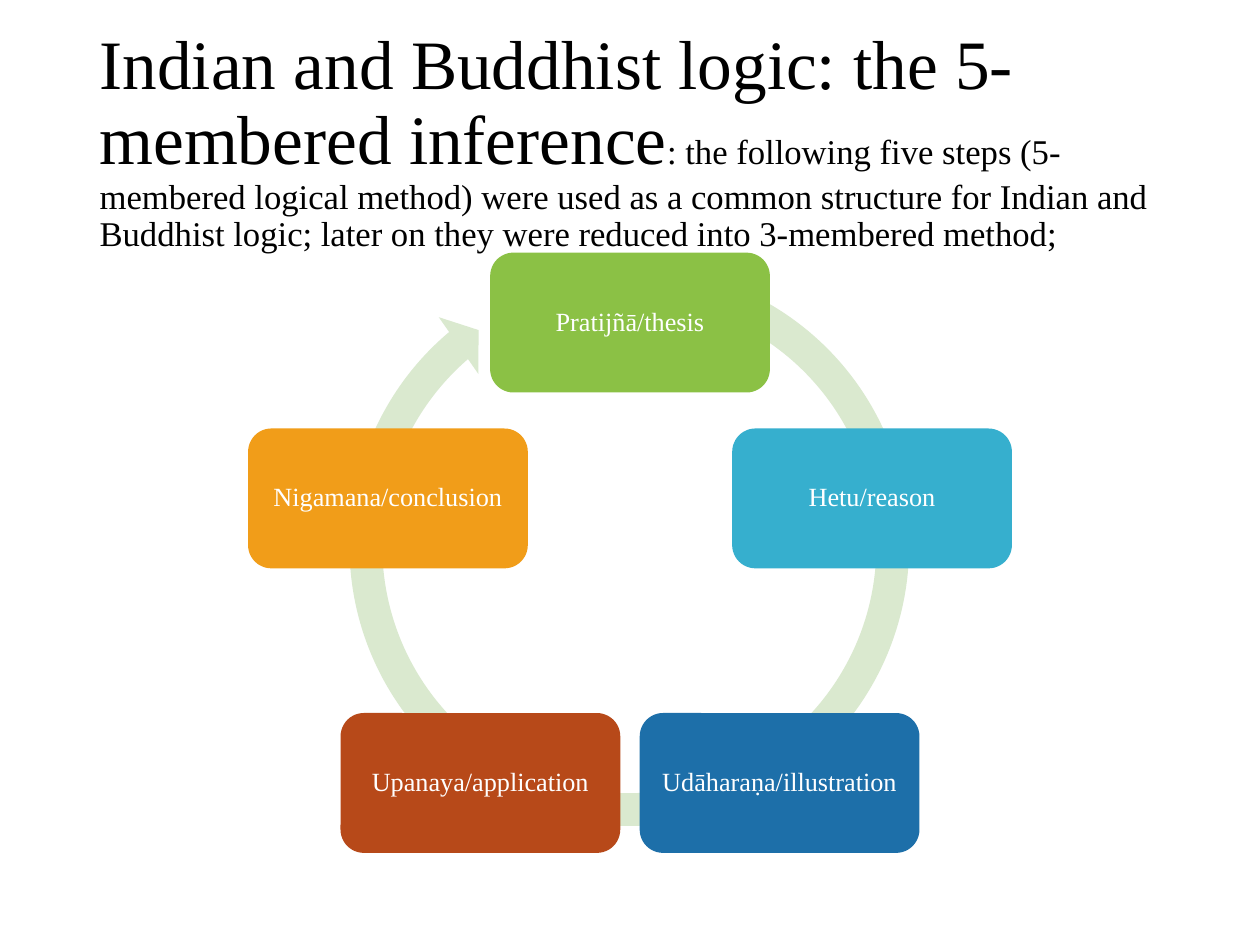
from dataclasses import dataclass
from math import cos, radians, sin

from pptx import Presentation
from pptx import util as u
from pptx.dml.color import RGBColor
from pptx.enum import shapes, text


@dataclass(frozen=True)
class Theme:
    font: str = "Times New Roman"
    ink: str = "000000"
    pale: str = "FFFFFF"
    ring: str = "DAE9CF"
    head: float = 39.6
    note: float = 19.8
    label: float = 15


theme = Theme()
steps = [
    ("Pratijñā/thesis", "8BC145"),
    ("Hetu/reason", "36AFCE"),
    ("Udāharaṇa/illustration", "1D6FA9"),
    ("Upanaya/application", "B74919"),
    ("Nigamana/conclusion", "F19D19"),
]


def write(para, words, size, color):
    run = para.add_run()
    run.text = words
    for key, value in {"name": theme.font, "size": u.Pt(size)}.items():
        setattr(run.font, key, value)
    run.font.color.rgb = RGBColor.from_string(color)


def draw(kind, box, color):
    shape = slide.shapes.add_shape(kind, *map(u.Inches, box))
    shape.shadow.inherit = False
    shape.fill.solid()
    shape.fill.fore_color.rgb = RGBColor.from_string(color)
    shape.line.fill.background()
    return shape


deck = Presentation()
deck.slide_width, deck.slide_height = u.Inches(10), u.Inches(7.5)
slide = deck.slides.add_slide(deck.slide_layouts[5])

# Title with a smaller explanatory run
title = slide.shapes.title
place = {"left": 0.69, "top": 0.4, "width": 8.62, "height": 1.45}
for key, value in place.items():
    setattr(title, key, u.Inches(value))
frame = title.text_frame
look = {"vertical_anchor": text.MSO_ANCHOR.MIDDLE, "word_wrap": True,
        "auto_size": text.MSO_AUTO_SIZE.NONE}
for key, value in look.items():
    setattr(frame, key, value)
para = frame.paragraphs[0]
para.alignment, para.line_spacing = text.PP_ALIGN.LEFT, 0.9
write(para, "Indian and Buddhist logic: the 5-membered inference",
      theme.head, theme.ink)
write(para, ": the following five steps (5-membered logical method) were used "
      "as a common structure for Indian and Buddhist logic; later on they "
      "were reduced into 3-membered method;", theme.note, theme.ink)

# Ring arrow behind the steps
ring = draw(shapes.MSO_SHAPE.CIRCULAR_ARROW, (2.63, 1.97, 4.73, 4.73), theme.ring)
for i, value in enumerate((0.055, 3.307, 137.758, 173.86, 0.058)):
    ring.adjustments[i] = value

# Steps, clockwise from the top at equal angles
mid_x, mid_y, radius = 5, 4.58, 2.02
wide, high = 2.22, 1.11
look["margin_left"] = look["margin_right"] = u.Inches(0.11)
look["margin_top"] = look["margin_bottom"] = u.Inches(0.11)
for i, (words, color) in enumerate(steps):
    turn = radians(i * 360 / len(steps))
    left = mid_x + radius * sin(turn) - wide / 2
    top = mid_y - radius * cos(turn) - high / 2
    card = draw(shapes.MSO_SHAPE.ROUNDED_RECTANGLE, (left, top, wide, high), color)
    for key, value in look.items():
        setattr(card.text_frame, key, value)
    para = card.text_frame.paragraphs[0]
    para.alignment, para.line_spacing = text.PP_ALIGN.CENTER, 0.9
    write(para, words, theme.label, theme.pale)

deck.save("out.pptx")
